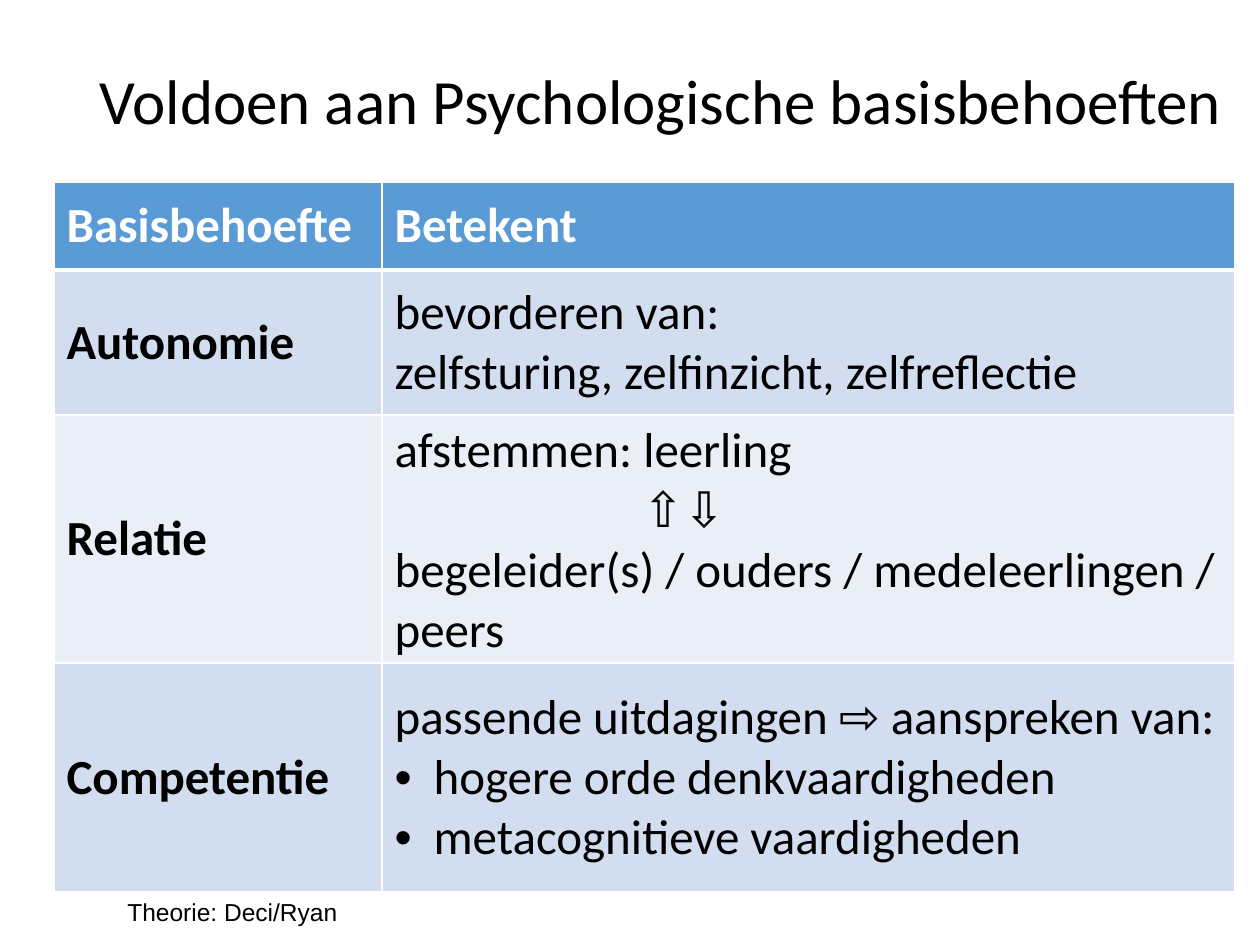
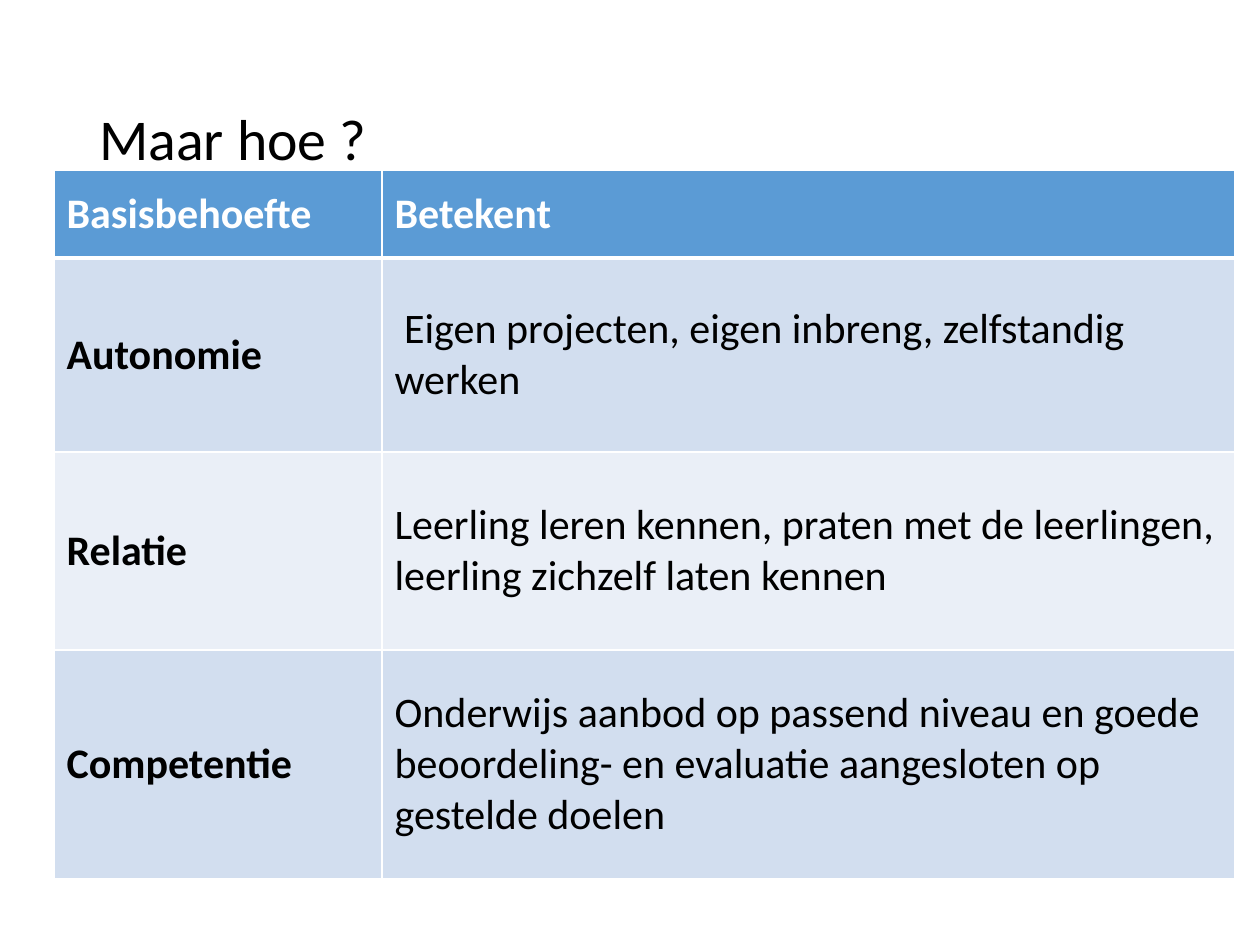
import pptx
import pptx.dml.color
import pptx.enum.text
import pptx.oxml
import pptx.oxml.ns
import pptx.util
import lxml.etree

WIDE, HIGH = 1260, 945
SCALE = 914400 / 126
COLORS = {
    "page": "FFFFFF",
    "ink": "000000",
    "head": "5B9BD5",
    "dark": "D2DEEF",
    "light": "EAEFF7",
}
COLS = (328, 853)
HEADS = ("Basisbehoefte", "Betekent")
NEEDS = ("Autonomie", "Relatie", "Competentie")
MIDDLE = pptx.enum.text.MSO_ANCHOR.MIDDLE
HANG = 39


def emu(px):
    return pptx.util.Emu(round(px * SCALE))


def tint(name):
    return pptx.dml.color.RGBColor.from_string(COLORS[name])


def write(frame, lines, size, font="Calibri", color="ink", bold=False, space=None):
    """Fill a frame; a line is text or (text, left, first, bullet)."""
    for i, line in enumerate(lines):
        text, left, first, mark = (line, 0, 0, "") if isinstance(line, str) else line
        para = frame.paragraphs[0] if i == 0 else frame.add_paragraph()
        props = para._p.get_or_add_pPr()
        props.set("marL", str(emu(left)))
        props.set("indent", str(emu(first)))
        if mark:
            face = lxml.etree.SubElement(props, pptx.oxml.ns.qn("a:buFont"))
            face.set("typeface", "Arial")
            dot = lxml.etree.SubElement(props, pptx.oxml.ns.qn("a:buChar"))
            dot.set("char", mark)
        if space:
            para.line_spacing = space
        run = para.add_run()
        run.text = text
        run.font.name = font
        run.font.size = pptx.util.Pt(size)
        run.font.bold = bold
        run.font.color.rgb = tint(color)


def label(slide, box, text, size, wrap=True, anchor=None, **style):
    frame = slide.shapes.add_textbox(*map(emu, box)).text_frame
    frame.word_wrap = wrap
    frame.vertical_anchor = anchor
    write(frame, [text], size, **style)


def title(slide, box, text, size):
    label(slide, box, text, size, anchor=MIDDLE, space=0.9)


def border(cell, row):
    """Draw white cell edges, with a thick rule under the header."""
    props = cell._tc.get_or_add_tcPr()
    thick = {(0, "lnB"), (1, "lnT")}
    for i, side in enumerate(("lnL", "lnR", "lnT", "lnB")):
        width = pptx.util.Pt(3 if (row, side) in thick else 1)
        props.insert(i, pptx.oxml.parse_xml(
            f'<a:{side} {pptx.oxml.ns.nsdecls("a")} w="{width}"><a:solidFill>'
            f'<a:srgbClr val="{COLORS["page"]}"/></a:solidFill></a:{side}>'))


def grid(slide, box, rows, means, size):
    """Set the needs beside their meanings, under a header row."""
    table = slide.shapes.add_table(len(rows), len(COLS), *map(emu, box)).table
    table.first_row = table.horz_banding = False
    for col, width in zip(table.columns, COLS):
        col.width = emu(width)
    body = [HEADS] + list(zip(NEEDS, means))
    for r, (height, pair) in enumerate(zip(rows, body)):
        table.rows[r].height = emu(height)
        fill = "head" if r == 0 else "dark" if r % 2 else "light"
        for c, text in enumerate(pair):
            cell = table.cell(r, c)
            cell.vertical_anchor = MIDDLE
            cell.fill.solid()
            cell.fill.fore_color.rgb = tint(fill)
            border(cell, r)
            lines = [text] if isinstance(text, str) else text
            write(cell.text_frame, lines, size, bold=r == 0 or c == 0,
                  color="page" if r == 0 else "ink")


def theory(slide):
    means = (
        ["bevorderen van:",
         ("zelfsturing, zelfinzicht, zelfreflectie", HANG, -HANG, "")],
        ["afstemmen: leerling",
         ("⇧⇩", 248, 0, ""),
         "begeleider(s) / ouders / medeleerlingen / peers"],
        ["passende uitdagingen ⇨ aanspreken van:",
         ("hogere orde denkvaardigheden", HANG, -HANG, "•"),
         ("metacognitieve vaardigheden", HANG, -HANG, "•")],
    )
    title(slide, (87, 13, 1149, 183), "Voldoen aan Psychologische basisbehoeften", 36)
    grid(slide, (54, 182, sum(COLS), 709), (88, 145, 229, 229), means, 28)
    label(slide, (115, 891, 252, 43), "Theorie: Deci/Ryan", 14, wrap=False, font="Arial")


def practice(slide):
    means = (
        " Eigen projecten, eigen inbreng, zelfstandig werken",
        "Leerling leren kennen, praten met de leerlingen, "
        "leerling zichzelf laten kennen",
        "Onderwijs aanbod op passend niveau en goede "
        "beoordeling- en evaluatie aangesloten op gestelde doelen",
    )
    title(slide, (87, 50, 1086, 183), "Maar hoe ?", 33)
    grid(slide, (54, 170, sum(COLS), 709), (88, 194, 198, 229), means, 24)


def main():
    deck = pptx.Presentation()
    deck.slide_width, deck.slide_height = emu(WIDE), emu(HIGH)
    for build in (theory, practice):
        build(deck.slides.add_slide(deck.slide_layouts[6]))
    deck.save("out.pptx")


if __name__ == "__main__":
    main()
